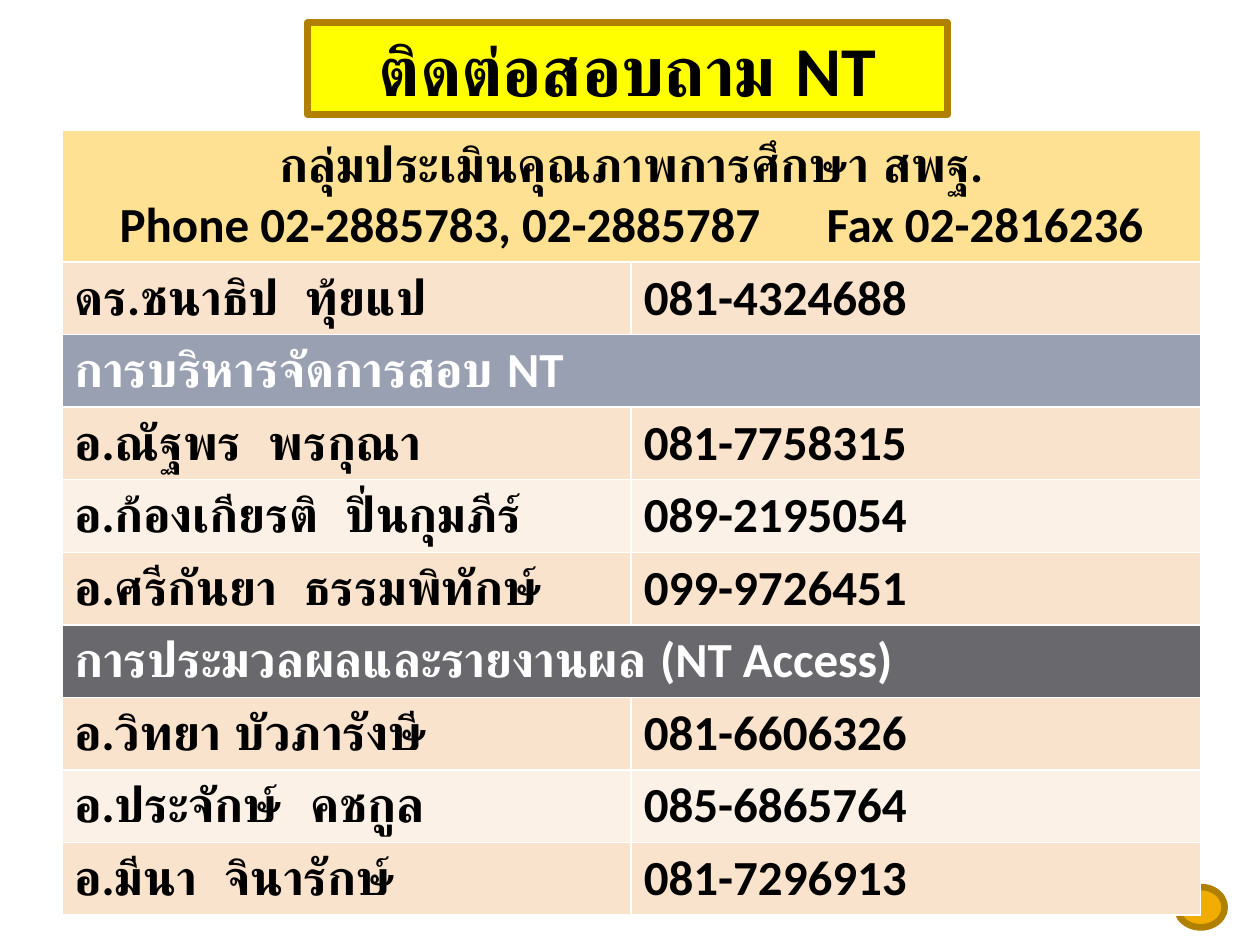
from typing import NamedTuple

from lxml import etree
from pptx import Presentation
from pptx.dml.color import RGBColor
from pptx.enum.shapes import MSO_SHAPE
from pptx.enum.text import MSO_ANCHOR, PP_ALIGN
from pptx.oxml.ns import qn
from pptx.util import Inches, Pt

CENTER = PP_ALIGN.CENTER
MIDDLE = MSO_ANCHOR.MIDDLE
OVAL = MSO_SHAPE.OVAL

FONT = "Calibri"
BLACK, WHITE = "000000", "FFFFFF"
YELLOW, AMBER, BROWN = "FFFF00", "F0AD00", "B28000"
GOLD, PEACH, CREAM = "FFE193", "F9E3CC", "FCF1E7"
SLATE, GRAY = "98A0B2", "68686D"


class Row(NamedTuple):
    """A table row; without a phone it spans both columns."""
    text: str
    phone: str
    fill: str
    color: str = BLACK


ROWS = [
    Row("กลุ่มประเมินคุณภาพการศึกษา สพฐ.\n"
        "\tPhone 02-2885783, 02-2885787\tFax 02-2816236", "", GOLD),
    Row("ดร.ชนาธิป  ทุ้ยแป", "081-4324688", PEACH),
    Row("การบริหารจัดการสอบ NT", "", SLATE, WHITE),
    Row("อ.ณัฐพร  พรกุณา", "081-7758315", PEACH),
    Row("อ.ก้องเกียรติ  ปิ่นกุมภีร์", "089-2195054", CREAM),
    Row("อ.ศรีกันยา  ธรรมพิทักษ์", "099-9726451", PEACH),
    Row("การประมวลผลและรายงานผล (NT Access)", "", GRAY, WHITE),
    Row("อ.วิทยา บัวภารังษี", "081-6606326", PEACH),
    Row("อ.ประจักษ์  คชกูล", "085-6865764", CREAM),
    Row("อ.มีนา  จินารักษ์", "081-7296913", PEACH),
]


def rgb(code: str) -> RGBColor:
    return RGBColor.from_string(code)


def paint(item, code: str) -> None:
    item.fill.solid()
    item.fill.fore_color.rgb = rgb(code)


def frame(shape, fill: str) -> None:
    """Fill a shape and give it the brown outline."""
    paint(shape, fill)
    shape.line.color.rgb = rgb(BROWN)
    shape.line.width = Pt(3.78)


def style(para, size: int, color: str) -> None:
    for run in para.runs:
        font = run.font
        font.name, font.size, font.bold = FONT, Pt(size), True
        font.color.rgb = rgb(color)


def add_tabs(para, stops: list[float]) -> None:
    tabs = etree.SubElement(para._p.get_or_add_pPr(), qn("a:tabLst"))
    for stop in stops:
        etree.SubElement(tabs, qn("a:tab"), pos=str(Inches(stop)), algn="l")


def add_title(slide, text: str) -> None:
    title = slide.shapes.title
    title.left, title.top = Inches(2.44), Inches(0.18)
    title.width, title.height = Inches(5.08), Inches(0.73)
    frame(title, YELLOW)
    body = title.text_frame
    body.text = text
    body.vertical_anchor = MIDDLE
    para = body.paragraphs[0]
    para.alignment = CENTER
    style(para, 40, BLACK)


def add_dot(slide) -> None:
    dot = slide.shapes.add_shape(
        OVAL, Inches(9.34), Inches(7.04), Inches(0.38), Inches(0.32))
    dot.shadow.inherit = False
    frame(dot, AMBER)


def fill_cell(cell, text: str, row: Row) -> None:
    paint(cell, row.fill)
    cell.vertical_anchor = MIDDLE
    cell.text_frame.text = text
    for para in cell.text_frame.paragraphs:
        style(para, 28, row.color)


def add_table(slide, rows: list[Row]) -> None:
    table = slide.shapes.add_table(
        len(rows), 2, Inches(0.49), Inches(1.03),
        Inches(9.04), Inches(6.16)).table
    for col in table.columns:
        col.width = Inches(4.52)
    for i, row in enumerate(rows):
        table.rows[i].height = Inches(0.57 if i else 1.03)
        left, right = table.cell(i, 0), table.cell(i, 1)
        fill_cell(left, row.text, row)
        if row.phone:
            fill_cell(right, row.phone, row)
        else:
            left.merge(right)
    group, lines = table.cell(0, 0).text_frame.paragraphs
    group.alignment = CENTER
    add_tabs(lines, [0.36, 5.97])


def main() -> None:
    deck = Presentation()
    deck.slide_width, deck.slide_height = Inches(10), Inches(7.5)
    slide = deck.slides.add_slide(deck.slide_layouts[5])
    add_title(slide, "ติดต่อสอบถาม NT")
    add_dot(slide)
    add_table(slide, ROWS)
    deck.save("out.pptx")


if __name__ == "__main__":
    main()
